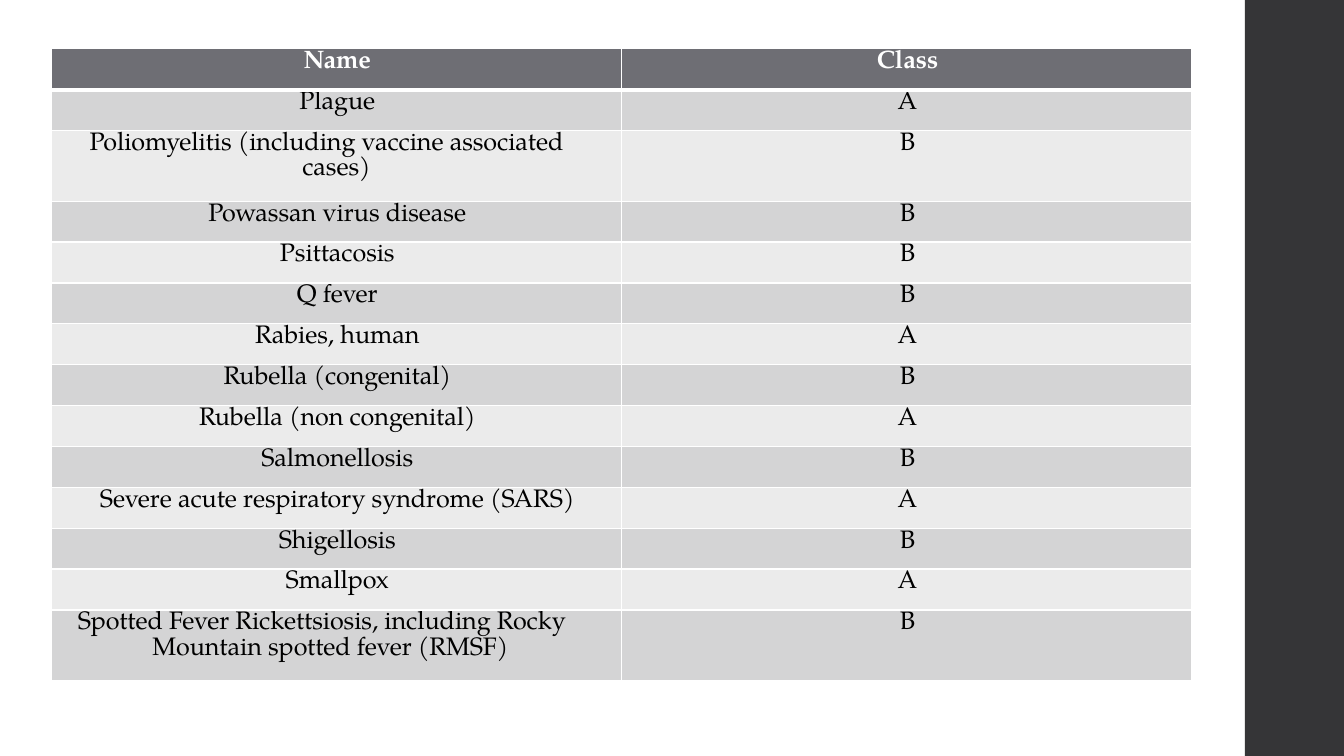
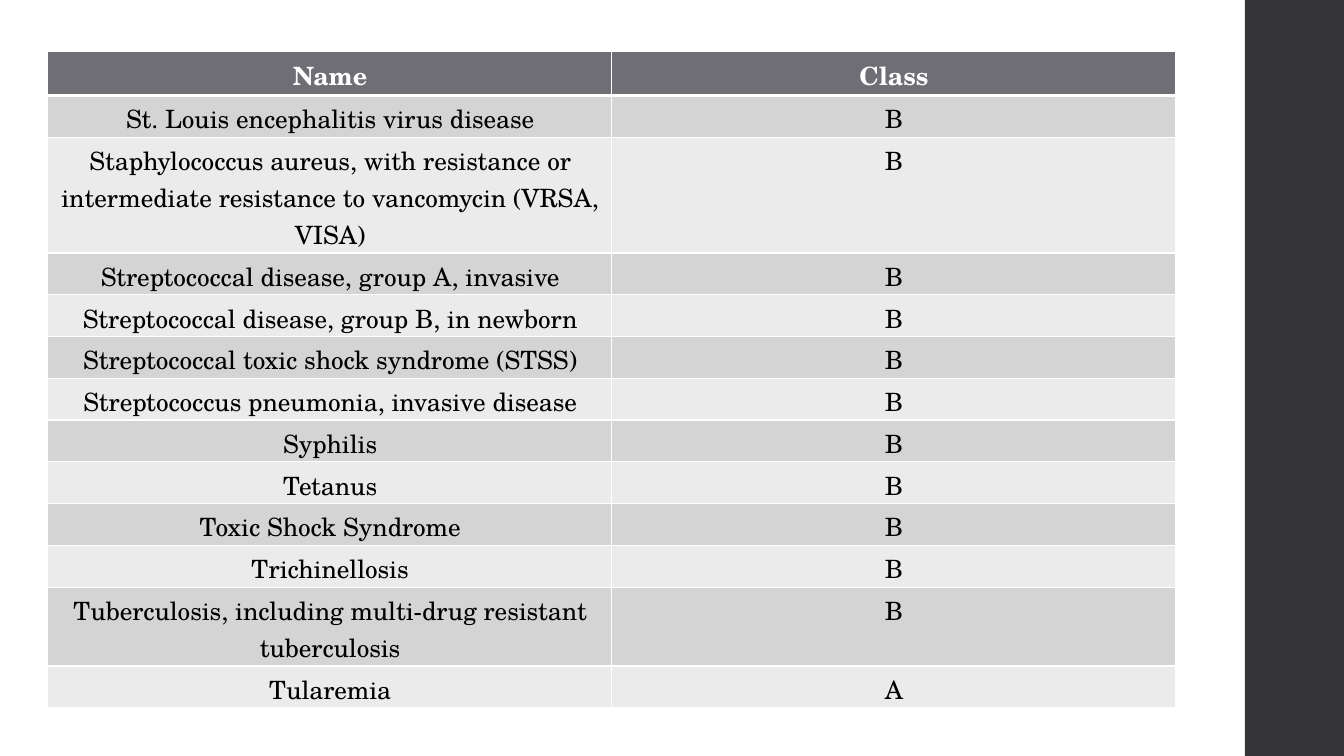
from dataclasses import dataclass

from lxml.etree import SubElement
from pptx import Presentation
from pptx.dml.color import RGBColor
from pptx.enum.shapes import MSO_SHAPE
from pptx.enum.text import PP_ALIGN
from pptx.oxml.ns import qn
from pptx.slide import Slide
from pptx.table import _Cell
from pptx.util import Cm, Pt

WHITE = RGBColor(0xFF, 0xFF, 0xFF)
BLACK = RGBColor(0x00, 0x00, 0x00)
DARK = RGBColor(0x35, 0x35, 0x37)
HEAD = RGBColor(0x6E, 0x6E, 0x74)
BANDS = (RGBColor(0xD4, 0xD4, 0xD5), RGBColor(0xEB, 0xEB, 0xEB))

WIDE, HIGH = Cm(33.87), Cm(19.05)
EDGE = Cm(31.37)
ROW = 1.03
THIN, THICK = Pt(1), Pt(3)


@dataclass(frozen=True)
class Row:
    name: str
    grade: str
    high: float = ROW
    left: float = 0.03
    right: float = 0
    hang: float = 0


@dataclass(frozen=True)
class Sheet:
    left: float
    top: float
    col: float
    font: str
    pad: float
    rows: tuple[Row, ...]


TITLE = Row("Name", "Class")
SHEETS = (
    Sheet(1.3, 1.23, 14.37, "TeX Gyre Pagella", 0.04, (
        Row("Plague", "A"),
        Row("Poliomyelitis (including vaccine associated cases)", "B",
            high=1.78, left=6.32, hang=5.36),
        Row("Powassan virus disease", "B"),
        Row("Psittacosis", "B"),
        Row("Q fever", "B"),
        Row("Rabies, human", "A"),
        Row("Rubella (congenital)", "B"),
        Row("Rubella (non congenital)", "A"),
        Row("Salmonellosis", "B"),
        Row("Severe acute respiratory syndrome (SARS)", "A"),
        Row("Shigellosis", "B"),
        Row("Smallpox", "A"),
        Row("Spotted Fever Rickettsiosis, including Rocky "
            "Mountain spotted fever (RMSF)", "B",
            high=1.78, left=2.54, hang=1.88),
    )),
    Sheet(1.2, 1.3, 14.21, "TeX Gyre Schola", 0.12, (
        Row("St. Louis encephalitis virus disease", "B"),
        Row("Staphylococcus aureus, with resistance or intermediate "
            "resistance to vancomycin (VRSA, VISA)", "B",
            high=2.54, left=0.3, right=0.27),
        Row("Streptococcal disease, group A, invasive", "B"),
        Row("Streptococcal disease, group B, in newborn", "B"),
        Row("Streptococcal toxic shock syndrome (STSS)", "B"),
        Row("Streptococcus pneumonia, invasive disease", "B"),
        Row("Syphilis", "B"),
        Row("Tetanus", "B"),
        Row("Toxic Shock Syndrome", "B"),
        Row("Trichinellosis", "B"),
        Row("Tuberculosis, including multi-drug resistant\ntuberculosis",
            "B", high=1.78),
        Row("Tularemia", "A"),
    )),
)


def write(cell: _Cell, text: str, *, font: str, color: RGBColor,
          bold: bool = False, track: int = 0, left: float = 0.03,
          right: float = 0, hang: float = 0) -> None:
    """Fill a cell with text; a hanging indent also aligns it left."""
    frame = cell.text_frame
    frame.text = text
    for num, para in enumerate(frame.paragraphs):
        para.alignment = PP_ALIGN.LEFT if hang else PP_ALIGN.CENTER
        para.line_spacing = 1.0
        para.space_before = Pt(0 if num else 3.4)
        props = para._p.get_or_add_pPr()
        props.set("marL", str(Cm(left)))
        props.set("marR", str(Cm(right)))
        props.set("indent", str(-Cm(hang)))
        for run in para.runs:
            run.font.name = font
            run.font.size = Pt(18)
            run.font.bold = bold
            run.font.color.rgb = color
            run._r.get_or_add_rPr().set("spc", str(track))


def frame_cell(cell: _Cell, fill: RGBColor, pad: float,
               top: int, base: int) -> None:
    """Set margins, white borders and then the fill, in schema order."""
    cell.margin_left = cell.margin_right = cell.margin_bottom = 0
    cell.margin_top = Cm(pad)
    props = cell._tc.get_or_add_tcPr()
    sides = {"lnL": THIN, "lnR": THIN, "lnT": top, "lnB": base}
    for side, width in sides.items():
        line = SubElement(props, qn(f"a:{side}"), w=str(width))
        paint = SubElement(line, qn("a:solidFill"))
        SubElement(paint, qn("a:srgbClr"), val=str(WHITE))
    cell.fill.solid()
    cell.fill.fore_color.rgb = fill


def draw_band(slide: Slide) -> None:
    band = slide.shapes.add_shape(
        MSO_SHAPE.RECTANGLE, EDGE, Cm(0), WIDE - EDGE, HIGH)
    band.shadow.inherit = False
    band.fill.solid()
    band.fill.fore_color.rgb = DARK
    band.line.fill.background()


def draw_table(slide: Slide, sheet: Sheet) -> None:
    rows = (TITLE, *sheet.rows)
    table = slide.shapes.add_table(
        len(rows), 2, Cm(sheet.left), Cm(sheet.top), Cm(2 * sheet.col),
        Cm(sum(row.high for row in rows))).table
    table.horz_banding = False
    for col in table.columns:
        col.width = Cm(sheet.col)
    for num, row in enumerate(rows):
        table.rows[num].height = Cm(row.high)
        first = num == 0
        fill = HEAD if first else BANDS[(num - 1) % 2]
        name, grade = table.rows[num].cells
        for cell in (name, grade):
            frame_cell(cell, fill, sheet.pad,
                       THICK if num == 1 else THIN,
                       THICK if first else THIN)
        style = dict(font=sheet.font, bold=first,
                     color=WHITE if first else BLACK)
        write(name, row.name, track=-5, left=row.left, right=row.right,
              hang=row.hang, **style)
        write(grade, row.grade, **style)


def main() -> None:
    deck = Presentation()
    deck.slide_width, deck.slide_height = WIDE, HIGH
    for sheet in SHEETS:
        slide = deck.slides.add_slide(deck.slide_layouts[6])
        draw_band(slide)
        draw_table(slide, sheet)
    deck.save("out.pptx")


if __name__ == "__main__":
    main()
